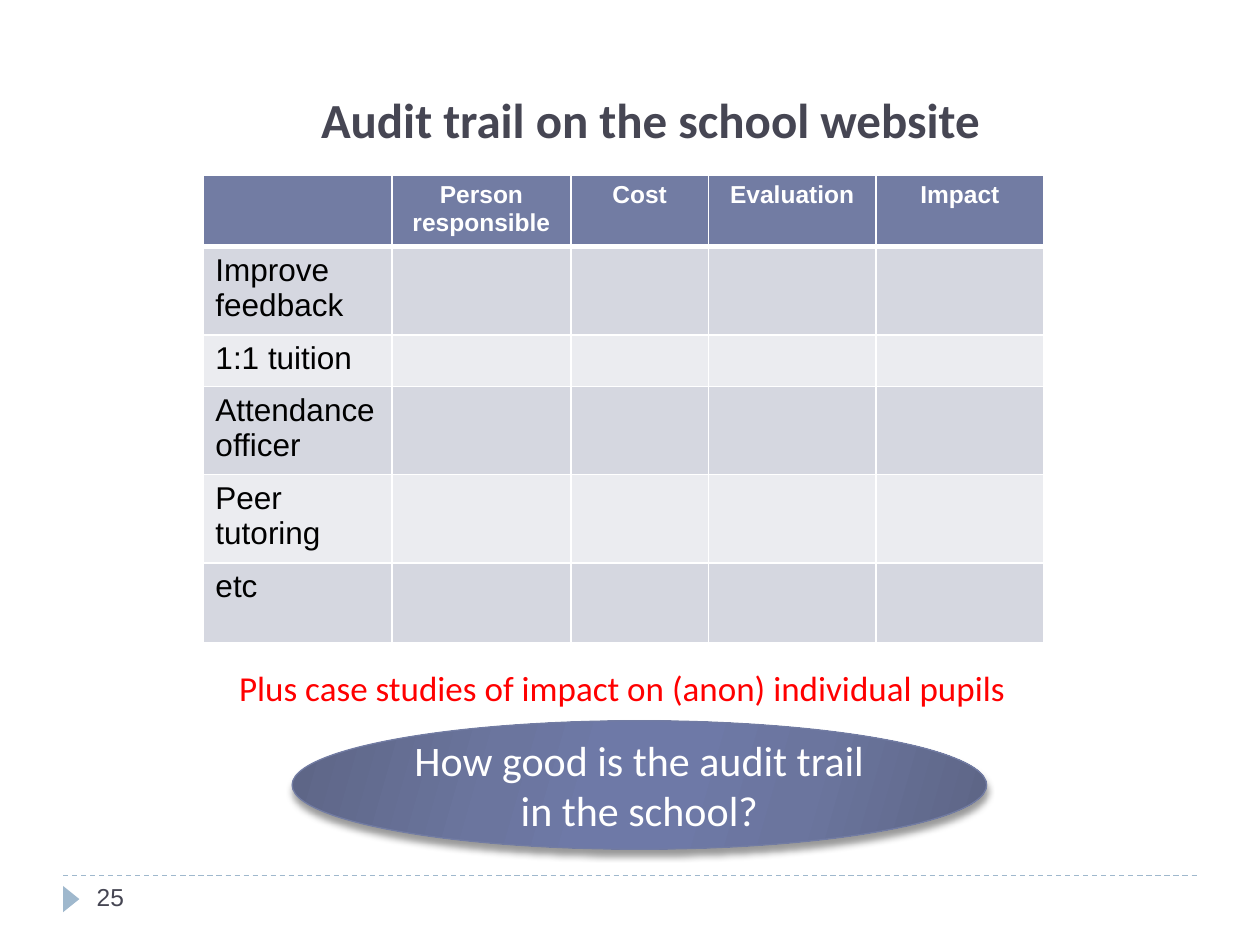
from lxml import etree
from pptx import Presentation
from pptx.dml.color import RGBColor
from pptx.enum.dml import MSO_LINE
from pptx.enum.shapes import MSO_CONNECTOR, MSO_SHAPE
from pptx.enum.text import MSO_ANCHOR, MSO_AUTO_SIZE, PP_ALIGN
from pptx.oxml import parse_xml
from pptx.oxml.ns import nsdecls, qn
from pptx.util import Cm, Pt

LEFT, CENTER = PP_ALIGN.LEFT, PP_ALIGN.CENTER
TOP, MIDDLE, BOTTOM = MSO_ANCHOR.TOP, MSO_ANCHOR.MIDDLE, MSO_ANCHOR.BOTTOM
NO_AUTOFIT = MSO_AUTO_SIZE.NONE
DASH = MSO_LINE.DASH
STRAIGHT = MSO_CONNECTOR.STRAIGHT
TRIANGLE, OVAL = MSO_SHAPE.ISOSCELES_TRIANGLE, MSO_SHAPE.OVAL

COLORS = {
    "title": "464653",
    "footer": "9FB8CD",
    "header": "727CA3",
    "band_dark": "D5D7E0",
    "band_light": "EBECF0",
    "note": "FF0000",
    "black": "000000",
    "white": "FFFFFF",
    "oval_edge": "5D6585",
    "oval_mid": "6B759E",
    "oval_center": "6E79A7",
}
HEADINGS = ["", "Person responsible", "Cost", "Evaluation", "Impact"]
ACTIONS = ["Improve feedback", "1:1 tuition", "Attendance officer", "Peer tutoring", "etc"]
COLUMN_WIDTHS = [3.81, 3.61, 2.77, 3.38, 3.38]
ROW_HEIGHTS = [1.32, 1.68, 1.04, 1.68, 1.68, 1.6]
OVAL_STOPS = [(0, "oval_edge"), (30, "oval_mid"), (45, "oval_center"),
              (55, "oval_center"), (73, "oval_mid"), (100, "oval_edge")]


def color(name):
    return RGBColor.from_string(COLORS[name])


def write(frame, text, size, font, shade, align=LEFT, bold=False):
    frame.word_wrap = True
    para = frame.paragraphs[0]
    para.alignment = align
    span = para.add_run()
    span.text = text
    span.font.size = Pt(size)
    span.font.name = font
    span.font.bold = bold
    span.font.color.rgb = color(shade)
    return para


def place(shape, left, top, width, height):
    shape.left, shape.top = Cm(left), Cm(top)
    shape.width, shape.height = Cm(width), Cm(height)


def add_title(page):
    title = page.shapes.title
    place(title, 3.1, 1.93, 20.02, 1.19)
    title.text_frame.auto_size = NO_AUTOFIT
    title.text_frame.vertical_anchor = BOTTOM
    write(title.text_frame, "Audit trail on the school website", 28, "Calibri",
          "title", CENTER, True)


def add_note(page):
    body = page.placeholders[1]
    place(body, 3.3, 13.3, 18.49, 1.2)
    body.text_frame.auto_size = NO_AUTOFIT
    body.text_frame.vertical_anchor = TOP
    para = write(body.text_frame, "Plus case studies of impact on (anon) individual pupils",
                 20, "Calibri", "note", CENTER)
    properties = para._p.get_or_add_pPr()
    properties.set("marL", "0")
    properties.set("indent", "0")
    etree.SubElement(properties, qn("a:buNone"))
    para.space_before = Pt(0)


def add_footer(page):
    rule = page.shapes.add_connector(STRAIGHT, Cm(1.27), Cm(17.65), Cm(24.13), Cm(17.65))
    rule.line.color.rgb = color("footer")
    rule.line.width = Pt(0.75)
    rule.line.dash_style = DASH
    etree.SubElement(rule._element.spPr, qn("a:effectLst"))

    marker = page.shapes.add_shape(TRIANGLE, Cm(1.17), Cm(17.96), Cm(0.53), Cm(0.33))
    marker.rotation = 90
    marker.shadow.inherit = False
    marker.fill.solid()
    marker.fill.fore_color.rgb = color("footer")
    marker.line.fill.background()

    number = page.shapes.add_textbox(Cm(1.7), Cm(17.65), Cm(5.51), Cm(1.02))
    write(number.text_frame, "25", 14, "Arial", "title")


def set_borders(cell, top, bottom):
    properties = cell._tc.get_or_add_tcPr()
    for side, width in (("L", 1), ("R", 1), ("T", top), ("B", bottom)):
        properties.append(parse_xml(
            f'<a:ln{side} {nsdecls("a")} w="{Pt(width)}"><a:solidFill>'
            f'<a:srgbClr val="{COLORS["white"]}"/></a:solidFill></a:ln{side}>'))


def add_audit_table(page):
    rows = [HEADINGS] + [[action] + [""] * 4 for action in ACTIONS]
    table = page.shapes.add_table(len(rows), len(HEADINGS), Cm(4.09), Cm(3.53),
                                  Cm(sum(COLUMN_WIDTHS)), Cm(sum(ROW_HEIGHTS))).table
    for column, width in zip(table.columns, COLUMN_WIDTHS):
        column.width = Cm(width)
    for row, height in zip(table.rows, ROW_HEIGHTS):
        row.height = Cm(height)
    for row_index, texts in enumerate(rows):
        is_header = row_index == 0
        band = "header" if is_header else "band_dark" if row_index % 2 else "band_light"
        for column_index, text in enumerate(texts):
            cell = table.cell(row_index, column_index)
            set_borders(cell, 3 if row_index == 1 else 1, 3 if is_header else 1)
            cell.fill.solid()
            cell.fill.fore_color.rgb = color(band)
            if text and is_header:
                write(cell.text_frame, text, 14, "Arial", "white", CENTER, True)
            elif text:
                write(cell.text_frame, text, 18, "Arial", "black")


def add_question(page):
    oval = page.shapes.add_shape(OVAL, Cm(5.89), Cm(14.53), Cm(14), Cm(2.59))
    oval.line.color.rgb = color("header")
    oval.line.width = Pt(0.75)
    stops = "".join(f'<a:gs pos="{position * 1000}"><a:srgbClr val="{COLORS[name]}"/></a:gs>'
                    for position, name in OVAL_STOPS)
    properties = oval._element.spPr
    properties.find(qn("a:prstGeom")).addnext(parse_xml(
        f'<a:gradFill {nsdecls("a")} rotWithShape="1"><a:gsLst>{stops}</a:gsLst>'
        f'<a:lin ang="{16 * 60000}" scaled="0"/></a:gradFill>'))
    properties.append(parse_xml(
        f'<a:effectLst {nsdecls("a")}><a:outerShdw blurRad="{Pt(4)}" dist="{Pt(3.4)}" '
        f'dir="{90 * 60000}" rotWithShape="0"><a:srgbClr val="{COLORS["black"]}">'
        '<a:alpha val="40000"/></a:srgbClr></a:outerShdw></a:effectLst>'))
    oval.text_frame.vertical_anchor = MIDDLE
    write(oval.text_frame, "How good is the audit trail in the school?", 24, "Calibri",
          "white", CENTER)


def main():
    deck = Presentation()
    deck.slide_width, deck.slide_height = Cm(25.4), Cm(19.05)
    page = deck.slides.add_slide(deck.slide_layouts[1])
    add_footer(page)
    add_title(page)
    add_note(page)
    add_question(page)
    add_audit_table(page)
    deck.save("out.pptx")


if __name__ == "__main__":
    main()
